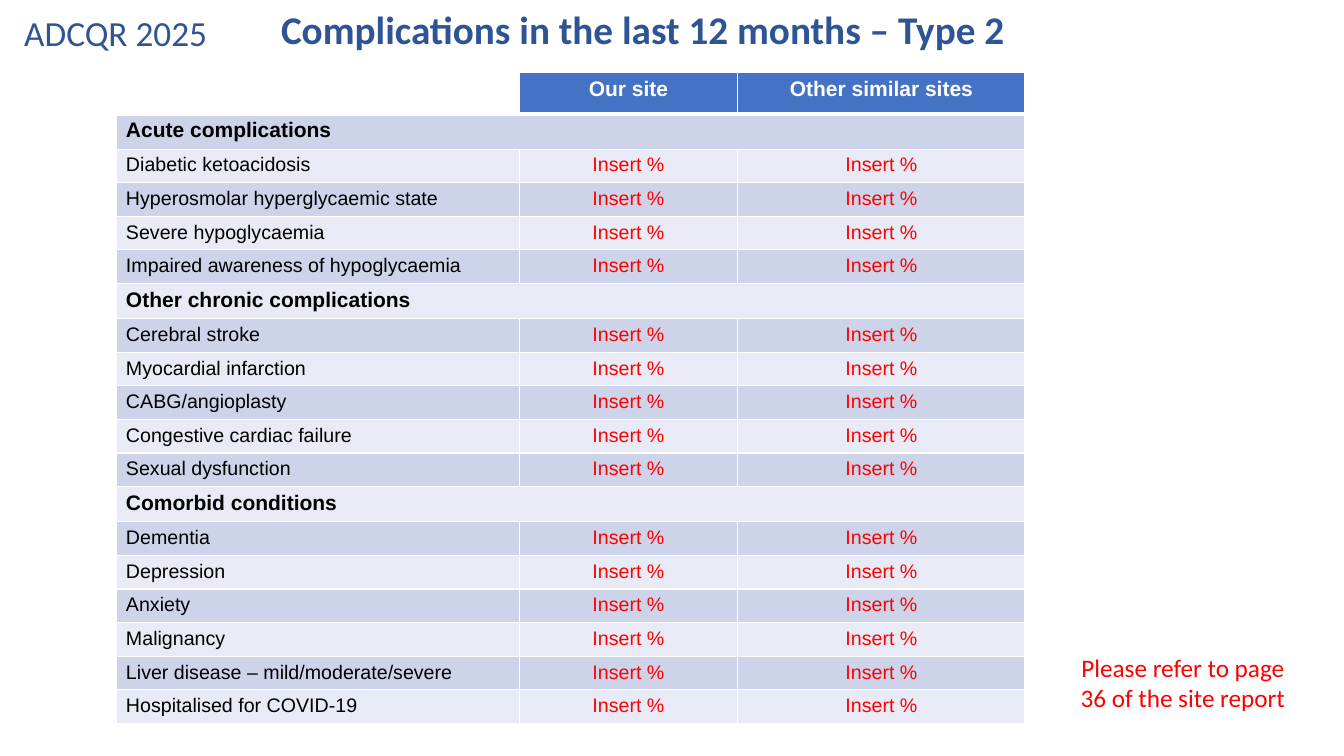
from dataclasses import dataclass
from lxml.etree import SubElement as Sub
from pptx import Presentation
from pptx.dml.color import RGBColor as Rgb
from pptx.enum.text import MSO_ANCHOR as Anchor, MSO_AUTO_SIZE as Fit, PP_ALIGN as Align
from pptx.oxml.ns import qn
from pptx.slide import Slide
from pptx.table import Table
from pptx.text.text import TextFrame
from pptx.util import Pt

HUES = {"navy": "2F5496", "blue": "4472C4", "dark": "CDD4EA", "light": "E8EBF5",
        "white": "FFFFFF", "black": "000000", "red": "FF0000"}
WIDTHS = (288, 156.24, 205.2)
HEAD = 29.5
HEADS = ("", "Our site", "Other similar sites")


@dataclass
class Style:
    font: str
    size: float
    hue: str
    bold: bool = False
    align: Align = Align.LEFT


@dataclass
class Group:
    name: str
    items: tuple[str, ...]


@dataclass
class Note:
    text: str
    left: float
    top: float
    width: float
    height: float
    pad: float
    style: Style


TITLE = Style("Calibri", 25.2, "navy")
LABEL = Style("Arial", 15, "white", True, Align.CENTER)
GROUP = Style("Arial", 15, "black", True)
ITEM = Style("Arial", 14, "black")
VALUE = Style("Arial", 14, "red", align=Align.CENTER)

GROUPS = (
    Group("Acute complications", (
        "Diabetic ketoacidosis", "Hyperosmolar hyperglycaemic state",
        "Severe hypoglycaemia", "Impaired awareness of hypoglycaemia")),
    Group("Other chronic complications", (
        "Cerebral stroke", "Myocardial infarction", "CABG/angioplasty",
        "Congestive cardiac failure", "Sexual dysfunction")),
    Group("Comorbid conditions", (
        "Dementia", "Depression", "Anxiety", "Malignancy",
        "Liver disease – mild/moderate/severe", "Hospitalised for COVID-19")),
)

NOTES = (
    Note("Complications in the last 12 months – Type 2", 193.68, 0, 828, 41.04, 3.6,
         Style("Calibri", 28, "navy", True)),
    Note("Please refer to page 36 of the site report", 756.72, 458.64, 176.4, 58.32, 7.2,
         Style("Calibri", 18, "red", align=Align.CENTER)),
)


def write(frame: TextFrame, text: str, style: Style) -> None:
    frame.text = text
    para = frame.paragraphs[0]
    para.alignment = style.align
    para.font.name = style.font
    para.font.size = Pt(style.size)
    para.font.bold = style.bold
    para.font.color.rgb = Rgb.from_string(HUES[style.hue])


def add_title(slide: Slide, text: str) -> None:
    title = slide.shapes.title
    title.left, title.top = Pt(10.08), Pt(7.92)
    title.width, title.height = Pt(157.68), Pt(33.84)
    frame = title.text_frame
    frame.auto_size = Fit.NONE
    frame.vertical_anchor = Anchor.MIDDLE
    write(frame, text, TITLE)
    frame.paragraphs[0].line_spacing = 0.9


def add_note(slide: Slide, note: Note) -> None:
    box = slide.shapes.add_textbox(
        Pt(note.left), Pt(note.top), Pt(note.width), Pt(note.height))
    frame = box.text_frame
    frame.word_wrap = True
    frame.auto_size = Fit.SHAPE_TO_FIT_TEXT
    frame.margin_top = frame.margin_bottom = Pt(note.pad)
    write(frame, note.text, note.style)


def paint(table: Table, row: int, col: int, hue: str) -> None:
    cell = table.cell(row, col)
    props = cell._tc.get_or_add_tcPr()
    thick = {"lnB": row == 0, "lnT": row == 1}
    for side in ("lnL", "lnR", "lnT", "lnB"):
        width = Pt(3 if thick.get(side) else 1)
        line = Sub(props, qn(f"a:{side}"), w=str(width))
        fill = Sub(line, qn("a:solidFill"))
        Sub(fill, qn("a:srgbClr"), val=HUES["white"])
    cell.fill.solid()
    cell.fill.fore_color.rgb = Rgb.from_string(HUES[hue])


def add_rates(slide: Slide) -> None:
    rows = [(HEADS, (LABEL,) * 3, HEAD)]
    for group in GROUPS:
        rows.append(((group.name,), (GROUP,), 25.2))
        rows += [((item, "Insert %", "Insert %"), (ITEM, VALUE, VALUE), 24)
                 for item in group.items]
    total = sum(high for _, _, high in rows)
    table = slide.shapes.add_table(
        len(rows), len(WIDTHS), Pt(82.8), Pt(51.84), Pt(sum(WIDTHS)), Pt(total)).table
    table.first_row = table.horz_banding = False
    for col, width in zip(table.columns, WIDTHS):
        col.width = Pt(width)
    for row, (texts, styles, high) in enumerate(rows):
        table.rows[row].height = Pt(high)
        for col in range(len(WIDTHS)):
            band = "dark" if row % 2 else "light"
            head = "blue" if col else "white"
            paint(table, row, col, band if row else head)
        if len(texts) == 1:
            table.cell(row, 0).merge(table.cell(row, len(WIDTHS) - 1))
        for col, (text, style) in enumerate(zip(texts, styles)):
            if text:
                write(table.cell(row, col).text_frame, text, style)


def main() -> None:
    deck = Presentation()
    deck.slide_width, deck.slide_height = Pt(960), Pt(540)
    slide = deck.slides.add_slide(deck.slide_layouts[5])
    add_title(slide, "ADCQR 2025")
    add_rates(slide)
    for note in NOTES:
        add_note(slide, note)
    deck.save("out.pptx")


if __name__ == "__main__":
    main()
